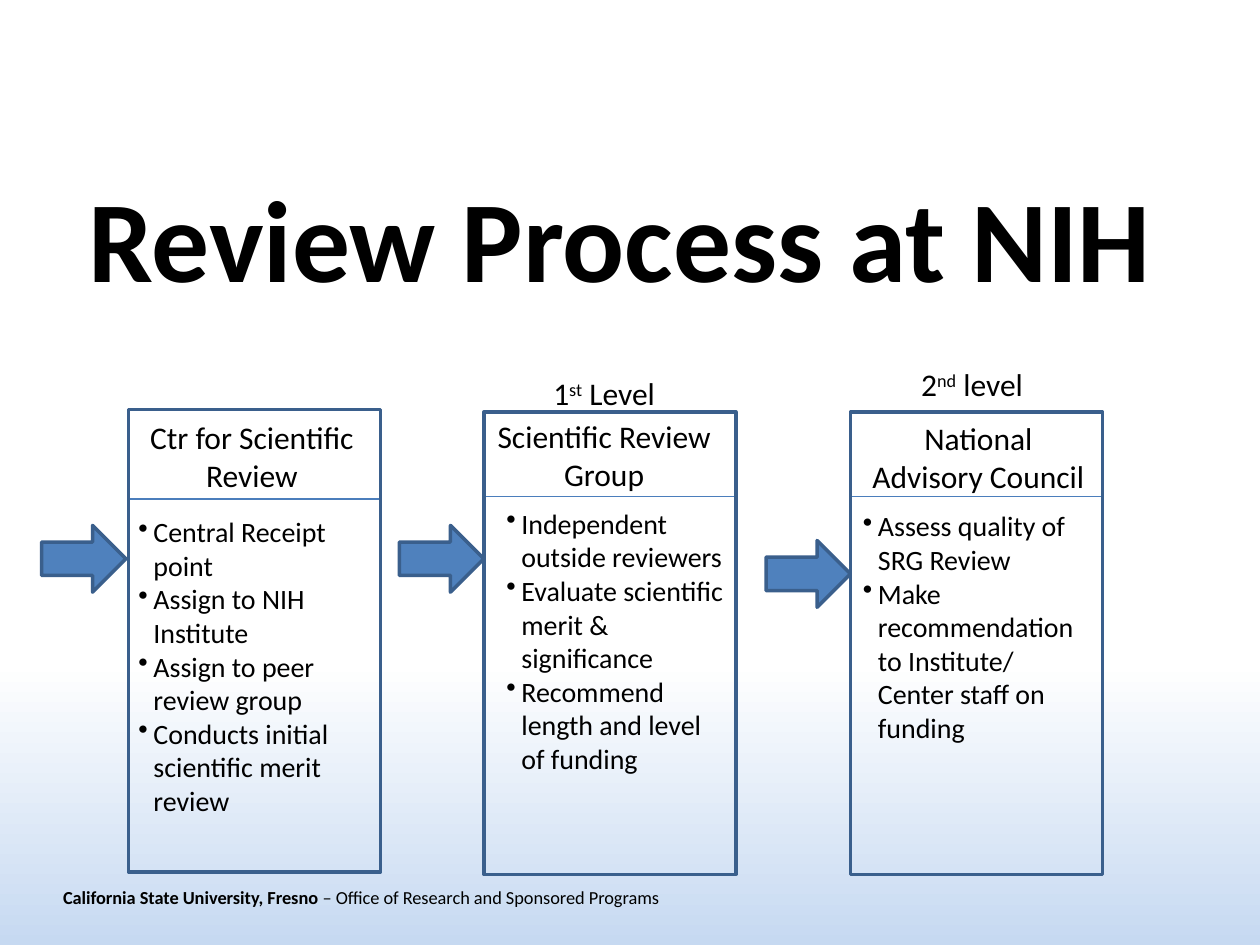
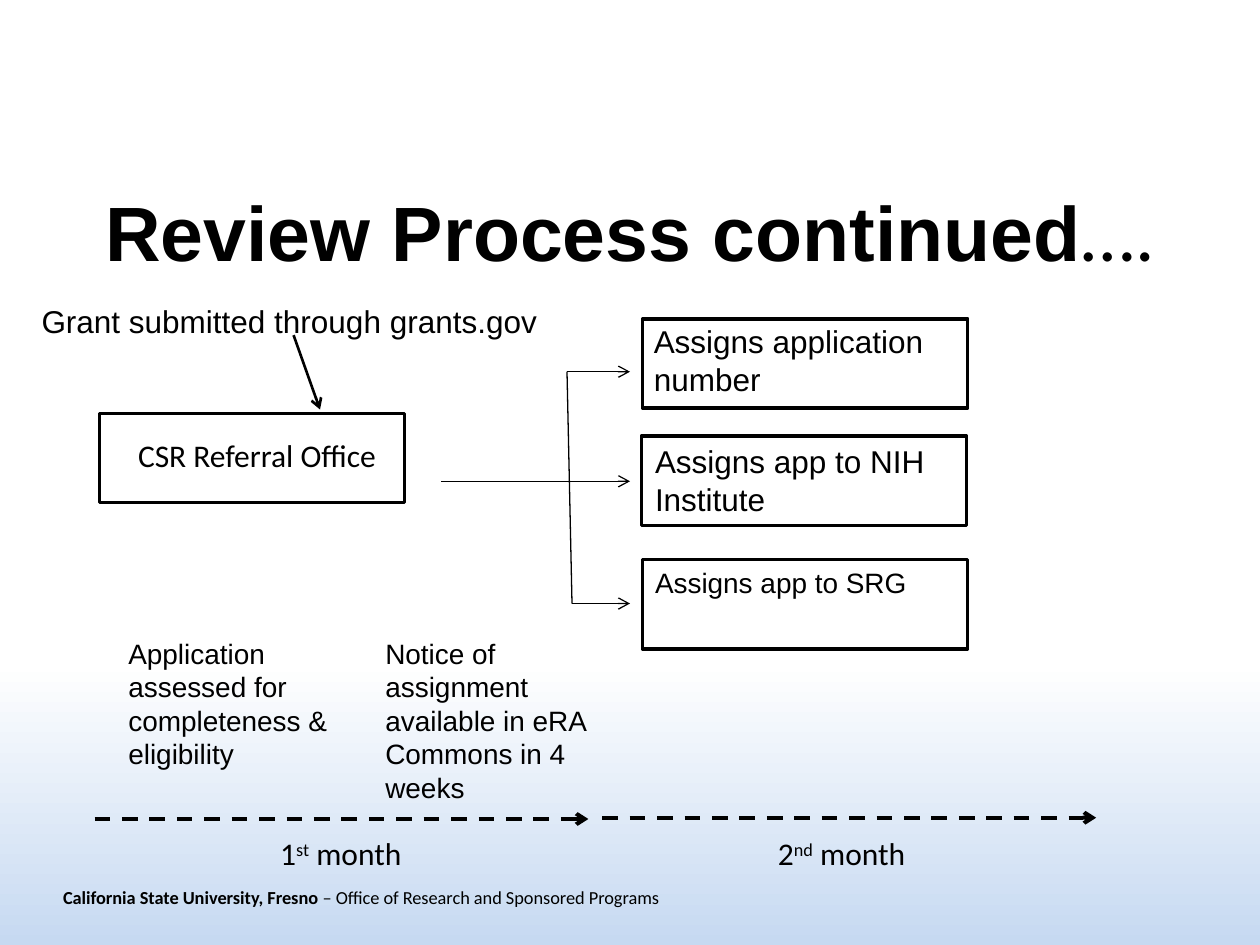
import pptx
import pptx.util
import pptx.dml.color
import pptx.enum.dml
import pptx.enum.shapes
import pptx.enum.text
import pptx.oxml.ns
import pptx.oxml.xmlchemy

PX = 9144  # EMU per px, 100 px to the inch
COLORS = {
    "text": "000000", "black": "000000", "white": "FFFFFF", "sky": "C6D9F1",
    "arrow": "4F81BD", "frame": "3A5F8C", "rule": "4B7EBC",
}
ALIGN = pptx.enum.text.PP_ALIGN
SHAPE = pptx.enum.shapes.MSO_SHAPE


def px(*values):
    return [pptx.util.Emu(v * PX) for v in values]


def rgb(name):
    return pptx.dml.color.RGBColor.from_string(COLORS[name])


def append_element(parent, tag, **attributes):
    child = pptx.oxml.xmlchemy.OxmlElement(tag)
    for name, value in attributes.items():
        child.set(name, value)
    parent.append(child)


def add_run(p, text, size, font="Calibri", bold=False, raised=False):
    r = p.add_run()
    r.text = text
    r.font.size = pptx.util.Pt(size)
    r.font.name = font
    r.font.bold = bold
    r.font.color.rgb = rgb("text")
    if raised:
        r._r.get_or_add_rPr().set("baseline", "30000")


def prepare_frame(sp, side_inset=10, middle=False):
    anchor = pptx.enum.text.MSO_ANCHOR
    tf = sp.text_frame
    tf.word_wrap = True
    tf.auto_size = pptx.enum.text.MSO_AUTO_SIZE.NONE
    tf.margin_left, tf.margin_right, tf.margin_top, tf.margin_bottom = px(
        side_inset, side_inset, 5, 5)
    tf.vertical_anchor = anchor.MIDDLE if middle else anchor.TOP
    return tf


def add_frame(s, box, **options):
    return prepare_frame(s.shapes.add_textbox(*px(*box)), **options)


def add_label(s, box, text, size=18, font="Calibri", align=ALIGN.CENTER, **options):
    tf = add_frame(s, box, **options)
    p = tf.paragraphs[0]
    p.alignment = align
    add_run(p, text, size, font)
    return tf


def add_ordinal(s, box, number, suffix, noun):
    p = add_frame(s, box).paragraphs[0]
    p.alignment = ALIGN.CENTER
    add_run(p, number, 18)
    add_run(p, suffix, 18, raised=True)
    add_run(p, f" {noun}", 18)


def add_bullets(tf, items, gap=0):
    """Append bullets, the first one gap points below the text before it."""
    for i, item in enumerate(items):
        p = tf.add_paragraph() if tf.text else tf.paragraphs[0]
        pPr = p._p.get_or_add_pPr()
        pPr.set("marL", str(12 * PX))
        pPr.set("indent", str(-12 * PX))
        append_element(pPr, "a:buChar", char="•")
        if i == 0 and gap:
            p.space_before = pptx.util.Pt(gap)
        add_run(p, item, 16)


def add_box(s, box, line, kind=SHAPE.RECTANGLE, fill=None):
    sp = s.shapes.add_shape(kind, *px(*box))
    sp.shadow.inherit = False
    if fill:
        sp.fill.solid()
        sp.fill.fore_color.rgb = rgb(fill)
    else:
        sp.fill.background()
    sp.line.color.rgb = rgb(line)
    sp.line.width = pptx.util.Pt(2)


def add_line(s, start, end, color="black", width=0.75, arrow=False, dashed=False):
    straight = pptx.enum.shapes.MSO_CONNECTOR.STRAIGHT
    cx = s.shapes.add_connector(straight, *px(*start, *end))
    cx.line.color.rgb = rgb(color)
    cx.line.width = pptx.util.Pt(width)
    if dashed:
        cx.line.dash_style = pptx.enum.dml.MSO_LINE.DASH
    spPr = cx._element.find(pptx.oxml.ns.qn("p:spPr"))
    if arrow:
        ln = spPr.find(pptx.oxml.ns.qn("a:ln"))
        append_element(ln, "a:tailEnd", type="arrow")
    append_element(spPr, "a:effectLst")


def set_background(master):
    fill = master.background.fill
    fill.gradient()
    fill.gradient_angle = 270
    for stop, position, color in zip(fill.gradient_stops, (0.7, 1), ("white", "sky")):
        stop.position = position
        stop.color.rgb = rgb(color)


def add_slide(prs, box, title_runs):
    """Add a slide with its title and the shared footer."""
    s = prs.slides.add_slide(prs.slide_layouts[5])
    title = s.shapes.title
    title.left, title.top, title.width, title.height = px(*box)
    p = prepare_frame(title, side_inset=0, middle=True).paragraphs[0]
    p.alignment = ALIGN.CENTER
    for text, size, font, bold in title_runs:
        add_run(p, text, size, font, bold)

    p = add_frame(s, (50, 692, 575, 40), side_inset=0, middle=True).paragraphs[0]
    add_run(p, "California State University, Fresno ", 10.5, bold=True)
    add_run(p, "– Office of Research and Sponsored Programs", 10.5)
    return s


def add_stage(s, left, top, rule_y, arrow_box):
    """Add the frame of a review stage, its heading rule and the arrow into it."""
    add_box(s, arrow_box, "frame", SHAPE.RIGHT_ARROW, "arrow")
    add_line(s, (left, rule_y), (left + 200, rule_y), "rule")
    add_box(s, (left, top, 200, 367), "frame")


def build_stages(prs):
    s = add_slide(prs, (42, 125, 900, 125),
                  [("Review Process at NIH", 66, "Calibri", True)])

    add_stage(s, 102, 325, 396, (33, 417, 67, 53))
    tf = add_label(s, (100, 327, 200, 330), "Ctr for Scientific Review")
    add_bullets(tf, ["Central Receipt point", "Assign to NIH Institute",
                     "Assign to peer review group",
                     "Conducts initial scientific merit review"], gap=12)

    add_stage(s, 384, 327, 394, (317, 417, 67, 53))
    add_ordinal(s, (383, 292, 193, 40), "1", "st", "Level")
    add_label(s, (383, 326, 193, 71), "Scientific Review Group")
    add_bullets(add_frame(s, (392, 397, 193, 226)),
                ["Independent outside reviewers",
                 "Evaluate scientific merit & significance",
                 "Recommend length and level of funding"])

    add_stage(s, 675, 327, 394, (608, 429, 67, 53))
    add_ordinal(s, (684, 285, 175, 40), "2", "nd", "level")
    add_label(s, (680, 328, 193, 71), "National Advisory Council")
    add_bullets(add_frame(s, (675, 399, 193, 199)),
                ["Assess quality of SRG Review",
                 "Make recommendation to Institute/ Center staff on funding"])


def build_timeline(prs):
    s = add_slide(prs, (50, 108, 900, 150),
                  [("Review Process continued", 44, "Arial", True),
                   ("….", 44, "Calibri", False)])
    add_label(s, (33, 235, 417, 67), "Grant submitted through grants.gov",
              font="Arial", align=ALIGN.LEFT, side_inset=0)
    add_line(s, (233, 266), (254, 325), width=1.5, arrow=True)

    add_box(s, (79, 328, 242, 71), "black")
    add_label(s, (79, 341, 250, 40), "CSR Referral Office")

    assignments = [
        ((510, 253), (509, 251), "Assigns application number", 18),
        ((509, 346), (510, 346), "Assigns app to NIH Institute", 18),
        ((510, 444), (510, 444), "Assigns app to SRG", 16),
    ]
    for frame_at, text_at, text, size in assignments:
        add_box(s, (*frame_at, 258, 71), "black")
        add_label(s, (*text_at, 258, 71), text, size, "Arial", ALIGN.LEFT)

    add_line(s, (450, 295), (454, 479))
    for x, y in ((450, 295), (350, 382), (454, 479)):
        add_line(s, (x, y), (500, y), arrow=True)

    notes = [
        (92, 118, "Application assessed for completeness & eligibility"),
        (296, 145, "Notice of assignment available in eRA Commons in 4 weeks"),
    ]
    for x, height, text in notes:
        add_label(s, (x, 500, 179, height), text, 16, "Arial", ALIGN.LEFT)

    months = [(75, 650, 79, 383, "1", "st"), (478, 649, 478, 380, "2", "nd")]
    for x, y, label_x, label_width, number, suffix in months:
        add_line(s, (x, y), (x + 392, y), width=2.25, arrow=True, dashed=True)
        add_ordinal(s, (label_x, 657, label_width, 40), number, suffix, "month")


def main():
    prs = pptx.Presentation()
    prs.slide_width, prs.slide_height = px(1000, 750)
    set_background(prs.slide_master)
    build_stages(prs)
    build_timeline(prs)
    prs.save("out.pptx")


if __name__ == "__main__":
    main()
